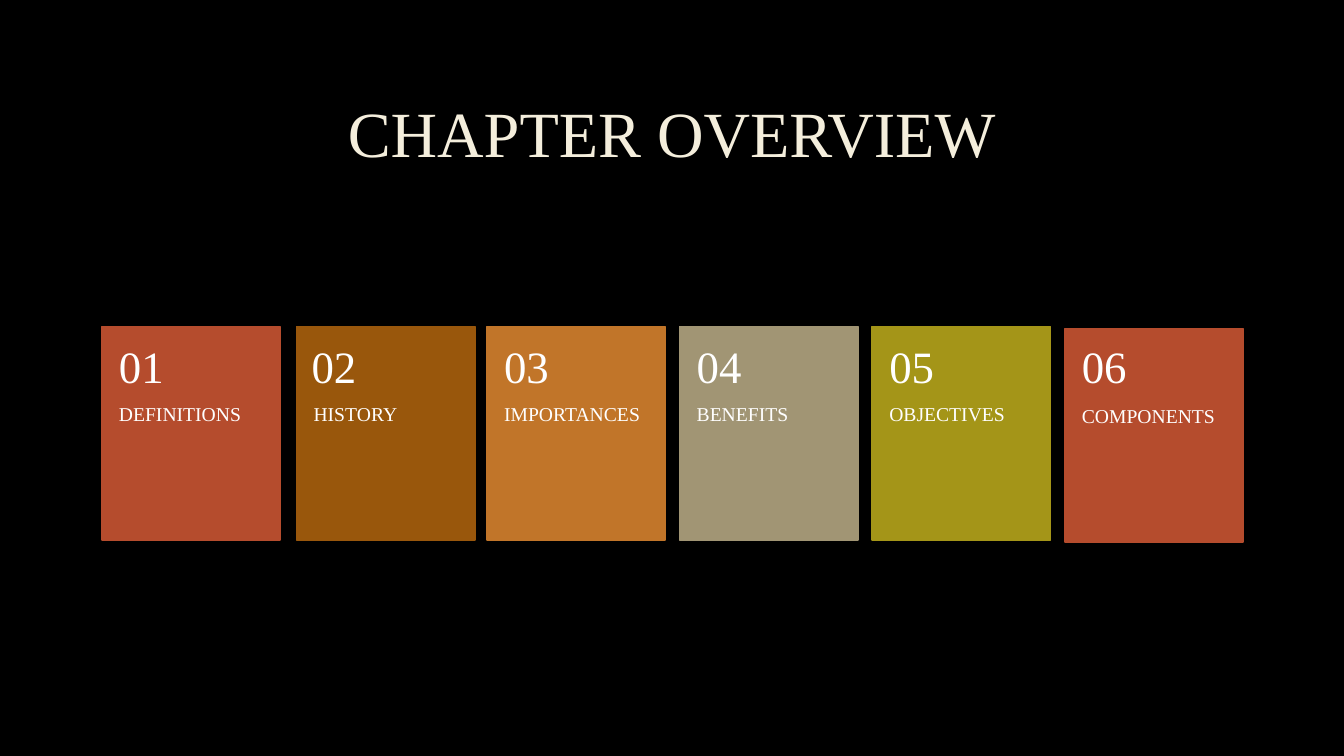
from dataclasses import dataclass

from lxml.etree import SubElement
from pptx import Presentation
from pptx.dml.color import RGBColor
from pptx.enum.shapes import MSO_SHAPE
from pptx.enum.text import MSO_ANCHOR, MSO_AUTO_SIZE, PP_ALIGN
from pptx.oxml.ns import qn
from pptx.shapes.shapetree import GroupShapes
from pptx.slide import Slide
from pptx.text.text import TextFrame, _Run
from pptx.util import Inches, Pt


@dataclass(frozen=True)
class Theme:
    font: str = "Times New Roman"
    background: str = "000000"
    title_color: str = "F4EEDC"
    title_outline: str = "404040"
    card_text: str = "FFFFFF"
    title_size: float = 46
    number_size: float = 32
    label_size: float = 14
    border_width: float = 1.25
    outline_width: float = 0.75


@dataclass(frozen=True)
class Chapter:
    label: str
    color: str
    shift_right: float = 0
    shift_down: float = 0


THEME = Theme()
CHAPTERS = [
    Chapter("DEFINITIONS", "B54C2D"),
    Chapter("HISTORY", "99570C", shift_right=0.02),
    Chapter("IMPORTANCES", "C17529"),
    Chapter("BENEFITS", "A19574"),
    Chapter("OBJECTIVES", "A49518"),
    Chapter("COMPONENTS", "B54C2D", shift_down=0.02),
]
FIRST_LEFT, CARD_STEP = 1.01, 1.91
CARD_TOP, CARD_WIDTH, CARD_HEIGHT = 3.24, 1.77, 2.12
NUMBER_HEIGHT = 0.85
SIDE_INSET = 0.17


def write_line(frame: TextFrame, text: str, size: float, color: str,
               alignment: PP_ALIGN = PP_ALIGN.LEFT) -> _Run:
    paragraph = frame.paragraphs[0]
    paragraph.alignment = alignment
    paragraph.line_spacing = 0.9
    run = paragraph.add_run()
    run.text = text
    run.font.name = THEME.font
    run.font.size = Pt(size)
    run.font.color.rgb = RGBColor.from_string(color)
    return run


def outline_text(run: _Run, color: str, width: float, opacity: int) -> None:
    properties = run.font._element
    line = SubElement(properties, qn("a:ln"), w=str(Pt(width)))
    fill = SubElement(line, qn("a:solidFill"))
    shade = SubElement(fill, qn("a:srgbClr"), val=color)
    SubElement(shade, qn("a:alpha"), val=str(opacity * 1000))
    properties.insert(0, line)


def add_title(slide: Slide) -> None:
    title = slide.shapes.title
    title.left, title.top = Inches(1), Inches(0.67)
    title.width, title.height = Inches(11.32), Inches(1.38)
    frame = title.text_frame
    frame.auto_size = MSO_AUTO_SIZE.NONE
    frame.vertical_anchor = MSO_ANCHOR.MIDDLE
    run = write_line(frame, "CHAPTER OVERVIEW", THEME.title_size,
                     THEME.title_color, PP_ALIGN.CENTER)
    outline_text(run, THEME.title_outline, THEME.outline_width, opacity=10)


def add_card_text(shapes: GroupShapes, left: float, top: float, height: float,
                  text: str, size: float, inset_top: float,
                  inset_bottom: float, anchor: MSO_ANCHOR) -> None:
    box = shapes.add_textbox(Inches(left), Inches(top),
                             Inches(CARD_WIDTH), Inches(height))
    frame = box.text_frame
    frame.word_wrap = True
    frame.vertical_anchor = anchor
    frame.margin_left = frame.margin_right = Inches(SIDE_INSET)
    frame.margin_top = Inches(inset_top)
    frame.margin_bottom = Inches(inset_bottom)
    write_line(frame, text, size, THEME.card_text)


def add_card(shapes: GroupShapes, index: int, chapter: Chapter) -> None:
    number_left = FIRST_LEFT + index * CARD_STEP
    left = number_left + chapter.shift_right
    top = CARD_TOP + chapter.shift_down
    card = shapes.add_shape(MSO_SHAPE.RECTANGLE, Inches(left), Inches(top),
                            Inches(CARD_WIDTH), Inches(CARD_HEIGHT))
    color = RGBColor.from_string(chapter.color)
    card.shadow.inherit = False
    card.fill.solid()
    card.fill.fore_color.rgb = color
    card.line.color.rgb = color
    card.line.width = Pt(THEME.border_width)
    add_card_text(shapes, left, top + NUMBER_HEIGHT,
                  CARD_HEIGHT - NUMBER_HEIGHT, chapter.label,
                  THEME.label_size, 0, 0.36, MSO_ANCHOR.TOP)
    add_card_text(shapes, number_left, CARD_TOP, NUMBER_HEIGHT,
                  f"{index + 1:02d}", THEME.number_size, 0.18, 0.18,
                  MSO_ANCHOR.MIDDLE)


def main() -> None:
    presentation = Presentation()
    presentation.slide_width = Inches(13.33)
    presentation.slide_height = Inches(7.5)
    title_only = presentation.slide_layouts.get_by_name("Title Only")
    slide = presentation.slides.add_slide(title_only)
    slide.background.fill.solid()
    slide.background.fill.fore_color.rgb = RGBColor.from_string(THEME.background)
    add_title(slide)
    cards = slide.shapes.add_group_shape()
    for index, chapter in enumerate(CHAPTERS):
        add_card(cards.shapes, index, chapter)
    presentation.save("out.pptx")


if __name__ == "__main__":
    main()
